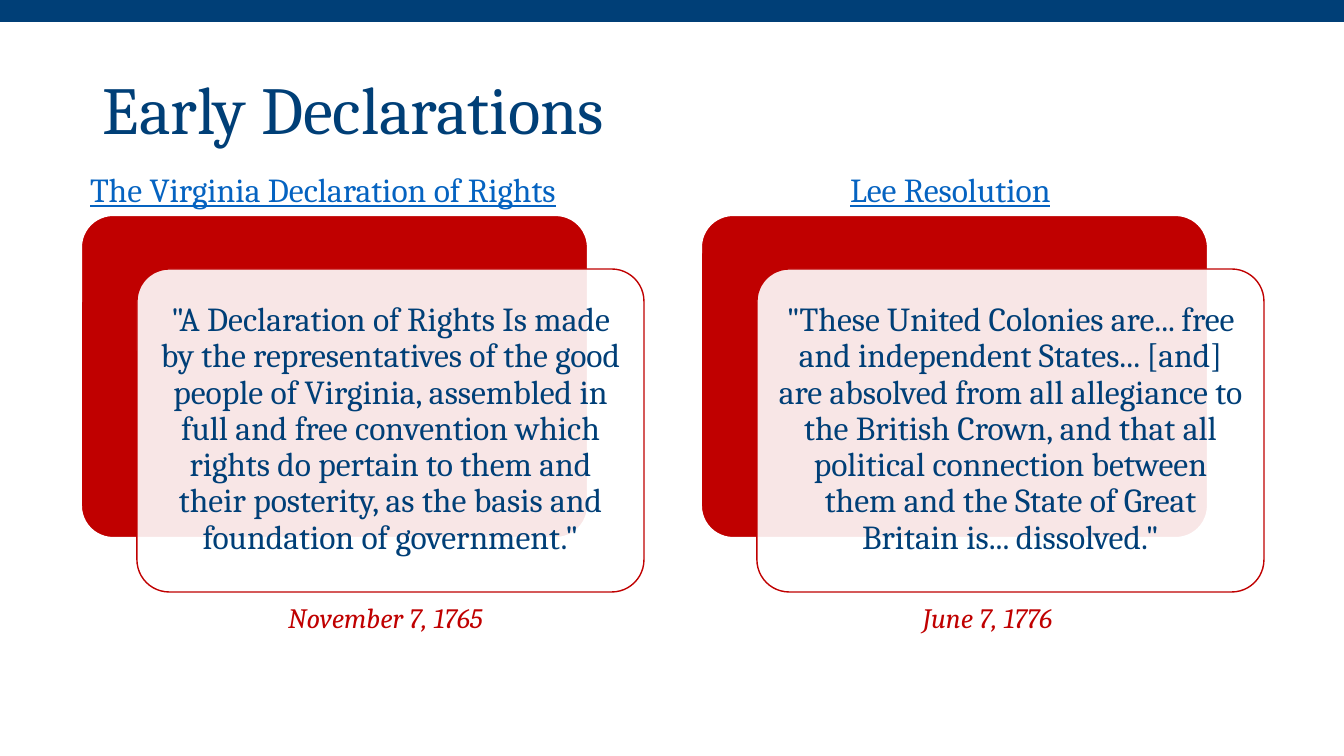
import pptx
import pptx.util
import pptx.dml.color
import pptx.enum.shapes
import pptx.enum.text
import lxml.etree

PX = 914400 / 100.8
NAVY = pptx.dml.color.RGBColor(0x00, 0x3F, 0x77)
RED = pptx.dml.color.RGBColor(0xC0, 0x00, 0x00)
WHITE = pptx.dml.color.RGBColor(0xFF, 0xFF, 0xFF)
LINK_BLUE = pptx.dml.color.RGBColor(0x05, 0x63, 0xC1)
FONT = "Cambria"
RECT = pptx.enum.shapes.MSO_SHAPE.RECTANGLE
ROUNDED = pptx.enum.shapes.MSO_SHAPE.ROUNDED_RECTANGLE
LEFT = pptx.enum.text.PP_ALIGN.LEFT
CENTER = pptx.enum.text.PP_ALIGN.CENTER
TOP = pptx.enum.text.MSO_ANCHOR.TOP
MIDDLE = pptx.enum.text.MSO_ANCHOR.MIDDLE

CARD_PITCH = 620
CARDS = [
    {
        "heading": "The Virginia Declaration of Rights",
        "heading_box": (80, 164, 585, 50),
        "quote": '"A Declaration of Rights Is made by the representatives of the '
                 "good people of Virginia, assembled in full and free convention "
                 "which rights do pertain to them and their posterity, as the "
                 'basis and foundation of government."',
        "date": "November 7, 1765",
        "date_box": (234, 595, 303, 44),
    },
    {
        "heading": "Lee Resolution",
        "heading_box": (840, 164, 495, 50),
        "quote": '"These United Colonies are... free and independent States... '
                 "[and] are absolved from all allegiance to the British Crown, "
                 "and that all political connection between them and the State "
                 'of Great Britain is... dissolved."',
        "date": "June 7, 1776",
        "date_box": (836, 595, 303, 44),
    },
]


def emu(px):
    return pptx.util.Emu(round(px * PX))


def add_box(slide, kind, box, fill, line=None, width=1, opacity=100):
    sp = slide.shapes.add_shape(kind, *map(emu, box))
    sp.shadow.inherit = False
    sp.fill.solid()
    sp.fill.fore_color.rgb = fill
    if opacity < 100:
        color = sp.fill._xPr.find(".//" + pptx.oxml.ns.qn("a:srgbClr"))
        alpha = lxml.etree.SubElement(color, pptx.oxml.ns.qn("a:alpha"))
        alpha.set("val", str(opacity * 1000))
    if line is None:
        sp.line.fill.background()
    else:
        sp.line.color.rgb = line
        sp.line.width = pptx.util.Pt(width)
    if kind == ROUNDED:
        sp.adjustments[0] = 0.1
    return sp


def add_text(slide, text, box, size=24, color=NAVY, align=LEFT, anchor=TOP,
             spacing=1.0, inset=5, underline=False, italic=False):
    sp = slide.shapes.add_textbox(*map(emu, box))
    tf = sp.text_frame
    tf.word_wrap = True
    tf.vertical_anchor = anchor
    tf.margin_left = tf.margin_right = emu(10)
    tf.margin_top = tf.margin_bottom = emu(inset)
    p = tf.paragraphs[0]
    p.alignment = align
    p.line_spacing = spacing
    r = p.add_run()
    r.text = text
    r.font.name = FONT
    r.font.size = pptx.util.Pt(size)
    r.font.color.rgb = color
    r.font.underline = underline
    r.font.italic = italic
    return sp


def add_card(slide, x, card):
    add_box(slide, ROUNDED, (x, 215, 507, 323), RED, line=WHITE, width=1.5)
    add_box(slide, ROUNDED, (x + 56, 269, 507, 323), WHITE, line=RED, opacity=90)
    add_text(slide, card["quote"], (x + 65, 278, 489, 303), align=CENTER,
             anchor=MIDDLE, spacing=0.9, inset=10)
    add_text(slide, card["heading"], card["heading_box"], color=LINK_BLUE,
             underline=True)
    add_text(slide, card["date"], card["date_box"], size=20, color=RED,
             align=CENTER, italic=True)


def main():
    prs = pptx.Presentation()
    prs.slide_width = emu(1344)
    prs.slide_height = emu(756)
    slide = prs.slides.add_slide(prs.slide_layouts[6])
    add_box(slide, RECT, (0, 0, 1344, 22), NAVY)
    add_text(slide, "Early Declarations", (93, 40, 1159, 146), size=48,
             anchor=MIDDLE, spacing=0.9)
    for i, card in enumerate(CARDS):
        add_card(slide, 81 + i * CARD_PITCH, card)
    prs.save("out.pptx")


if __name__ == "__main__":
    main()
